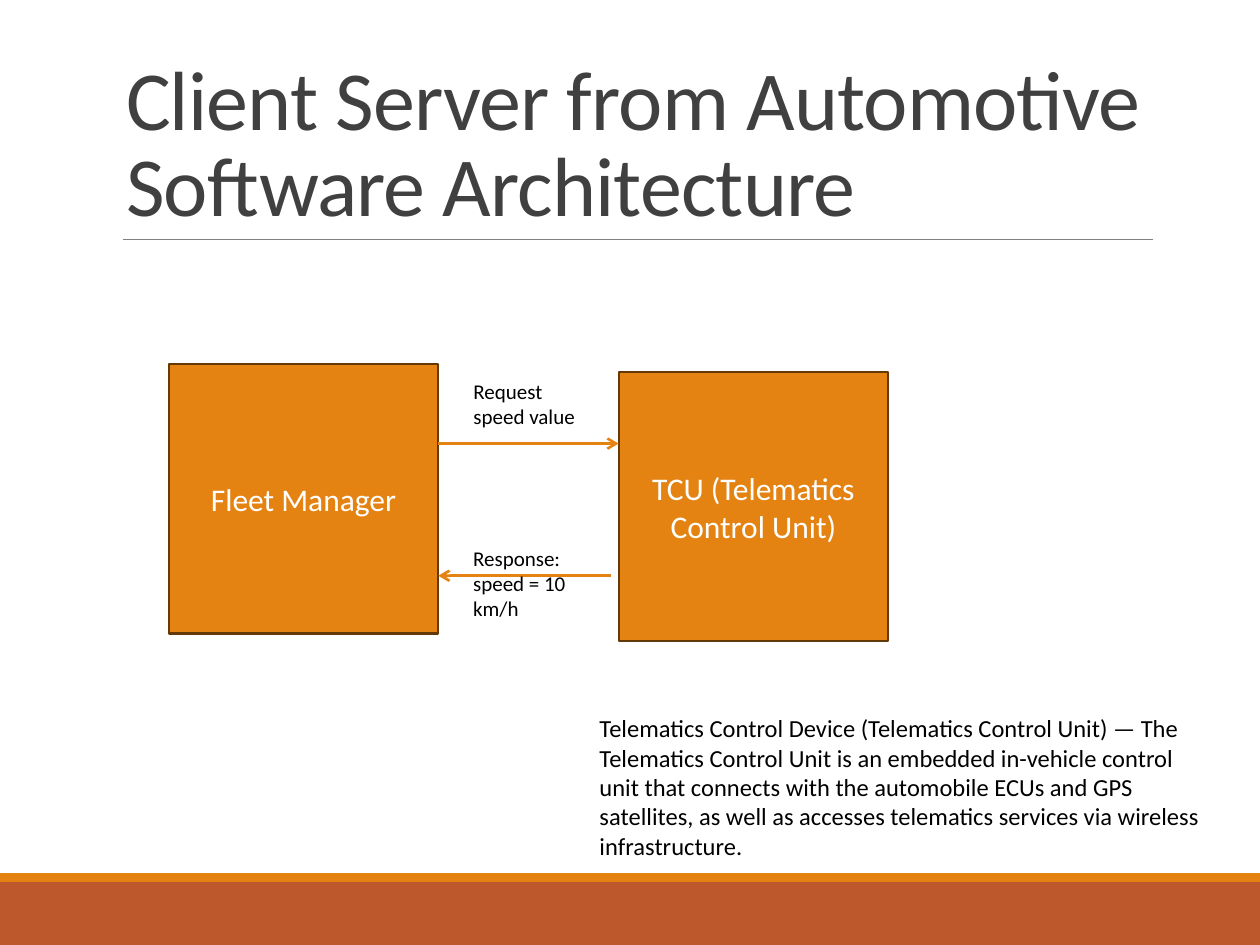
from pptx import Presentation
from pptx import util as u
from pptx.dml.color import RGBColor
from pptx.enum import shapes, text
from pptx.oxml.ns import qn
from lxml import etree

FONT = "Calibri"
ORANGE, RUST, BROWN = "E48312", "BD582C", "643908"
GREY, DARK, BLACK, WHITE = "808080", "404040", "000000", "FFFFFF"


def color(value):
    return RGBColor.from_string(value)


def write(shape, words, size=12, ink=BLACK, align=text.PP_ALIGN.LEFT,
          anchor=text.MSO_ANCHOR.TOP, line_spacing=None, tracking=None):
    frame = shape.text_frame
    frame.word_wrap = True
    frame.vertical_anchor = anchor
    para = frame.paragraphs[0]
    para.alignment = align
    if line_spacing:
        para.line_spacing = line_spacing
    span = para.add_run()
    span.text = words
    span.font.name = FONT
    span.font.size = u.Pt(size)
    span.font.color.rgb = color(ink)
    if tracking:  # hundredths of a point
        span._r.get_or_add_rPr().set("spc", str(tracking))


def add_text(page, area, words, **style):
    box = page.shapes.add_textbox(*map(u.Pt, area))
    write(box, words, **style)
    return box


def add_rect(page, area, fill, outline=None):
    rect = page.shapes.add_shape(shapes.MSO_SHAPE.RECTANGLE, *map(u.Pt, area))
    rect.shadow.inherit = False
    rect.fill.solid()
    rect.fill.fore_color.rgb = color(fill)
    if outline:
        rect.line.color.rgb = color(outline)
        rect.line.width = u.Pt(1.25)
    else:
        rect.line.fill.background()
    return rect


def add_node(page, area, words):
    node = add_rect(page, area, ORANGE, outline=BROWN)
    write(node, words, size=18, ink=WHITE, align=text.PP_ALIGN.CENTER,
          anchor=text.MSO_ANCHOR.MIDDLE)


def add_line(page, start, end, y, ink, width, arrow=False):
    line = page.shapes.add_connector(
        shapes.MSO_CONNECTOR.STRAIGHT, u.Pt(start), u.Pt(y), u.Pt(end), u.Pt(y))
    line.line.color.rgb = color(ink)
    line.line.width = u.Pt(width)
    if arrow:
        etree.SubElement(line.line._get_or_add_ln(), qn("a:tailEnd"), type="arrow")
    etree.SubElement(line._element.spPr, qn("a:effectLst"))


def main():
    deck = Presentation()
    deck.slide_width, deck.slide_height = u.Pt(720), u.Pt(540)
    page = deck.slides.add_slide(deck.slide_layouts[6])

    # Footer bands and title rule
    add_rect(page, (0, 504, 720, 36), RUST)
    add_rect(page, (0, 499, 720, 5), ORANGE)
    add_line(page, 70.5, 659, 136.8, GREY, 0.5)

    # Title
    add_text(page, (65, 22.5, 594, 114.3),
             "Client Server from Automotive Software Architecture",
             size=48, ink=DARK, anchor=text.MSO_ANCHOR.BOTTOM,
             line_spacing=0.85, tracking=-50)

    # Client and server
    side = 154
    client_left, server_left = 96.5, 353.5
    client_right = client_left + side
    add_node(page, (client_left, 208, side, side), "Fleet Manager")
    add_node(page, (server_left, 212.5, side, side), "TCU (Telematics Control Unit)")

    # Request and response
    add_line(page, client_right, server_left, 253.5, ORANGE, 1.5, arrow=True)
    add_line(page, 349, client_right, 329, ORANGE, 1.5, arrow=True)
    add_text(page, (263.5, 212.5, 77, 36), "Request speed value")
    add_text(page, (263.3, 308, 77, 51), "Response: speed = 10 km/h")

    # Explanation of the server
    add_text(page, (335.5, 404, 360, 92),
             "Telematics Control Device (Telematics Control Unit) — The Telematics "
             "Control Unit is an embedded in-vehicle control unit that connects with "
             "the automobile ECUs and GPS satellites, as well as accesses telematics "
             "services via wireless infrastructure.", size=14)

    deck.save("out.pptx")


if __name__ == "__main__":
    main()
